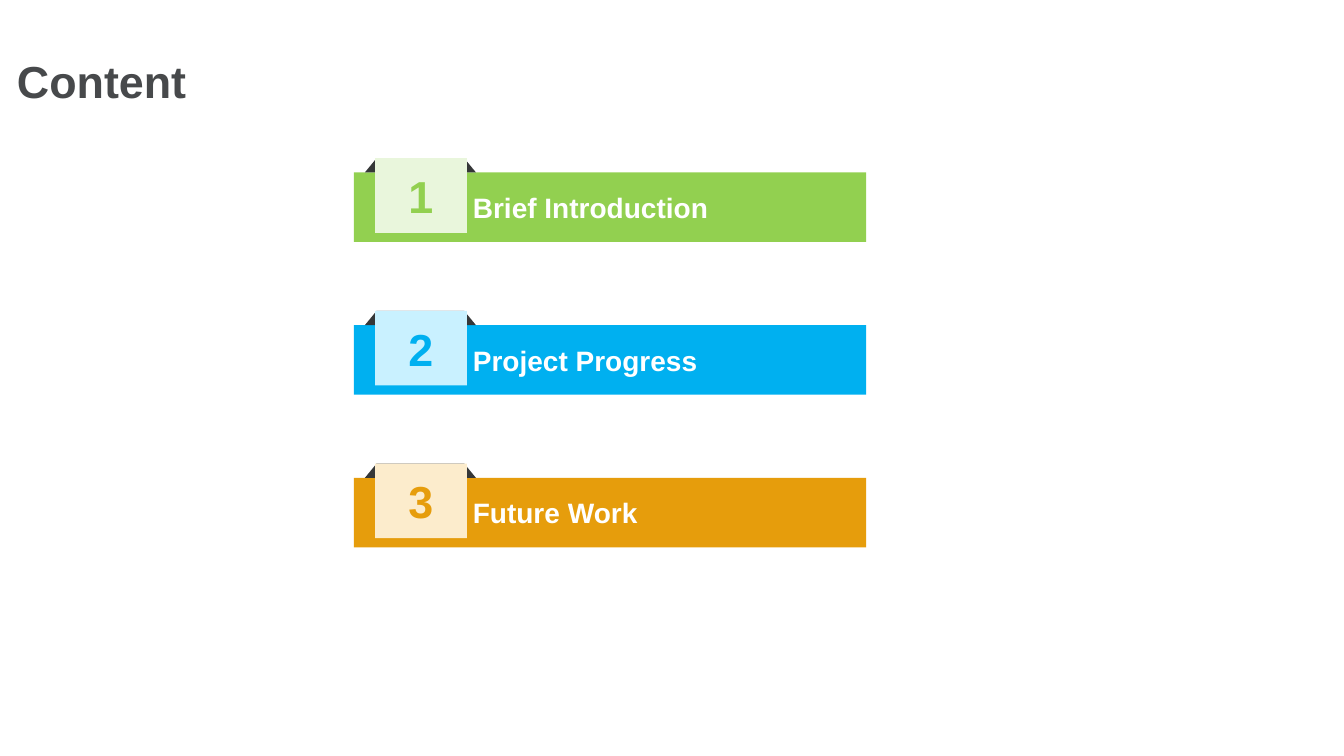
"""Build a content slide with three numbered agenda banners."""
import dataclasses

import pptx
import pptx.dml.color
import pptx.enum.shapes
import pptx.enum.text
import pptx.util

Inches = pptx.util.Inches
Shape = pptx.enum.shapes.MSO_SHAPE
Align = pptx.enum.text.PP_ALIGN
Anchor = pptx.enum.text.MSO_ANCHOR


@dataclasses.dataclass(frozen=True)
class Theme:
    """Hold the colours, font and type sizes of the slide."""
    font: str = "Arial"
    heading_size: int = 32
    label_size: int = 20
    heading: str = "47494B"
    label: str = "FFFFFF"
    fold: str = "353738"
    green: str = "92D050"
    pale_green: str = "E9F6DC"
    blue: str = "00B0F0"
    pale_blue: str = "C9F1FF"
    orange: str = "E69D0C"
    pale_orange: str = "FCECCC"


THEME = Theme()
AGENDA = [
    ("Brief Introduction", THEME.green, THEME.pale_green),
    ("Project Progress", THEME.blue, THEME.pale_blue),
    ("Future Work", THEME.orange, THEME.pale_orange),
]
FIRST_TOP, LAST_TOP = 1.57, 4.6
FOLD_HEIGHT = 0.14


def write_text(box, text, size, colour, align=Align.LEFT):
    """Write one bold paragraph in a shape."""
    box.text_frame.word_wrap = True
    para = box.text_frame.paragraphs[0]
    para.text = text
    para.alignment = align
    para.font.name = THEME.font
    para.font.size = pptx.util.Pt(size)
    para.font.bold = True
    para.font.color.rgb = pptx.dml.color.RGBColor.from_string(colour)


def add_block(group, kind, left, top, width, height, colour):
    """Add a plain filled shape without outline or shadow."""
    block = group.shapes.add_shape(
        kind, Inches(left), Inches(top), Inches(width), Inches(height))
    block.shadow.inherit = False
    block.fill.solid()
    block.fill.fore_color.rgb = pptx.dml.color.RGBColor.from_string(colour)
    block.line.fill.background()
    block.text_frame.vertical_anchor = Anchor.MIDDLE
    return block


def add_banner(page, number, top, label, colour, tint):
    """Add a labelled bar with a number tab folded over its top edge."""
    group = page.shapes.add_group_shape()
    bar = add_block(group, Shape.RECTANGLE, 3.51, top + FOLD_HEIGHT, 5.08, 0.69, colour)
    bar.text_frame.margin_left = Inches(1.18)
    write_text(bar, label, THEME.label_size, THEME.label, Align.JUSTIFY)
    fold = add_block(group, Shape.TRAPEZOID, 3.62, top, 1.1, FOLD_HEIGHT, THEME.fold)
    fold.adjustments[0] = 0.82
    tab = add_block(group, Shape.RECTANGLE, 3.72, top, 0.91, 0.74, tint)
    write_text(tab, str(number), THEME.heading_size, colour, Align.CENTER)


def add_heading(page, text):
    """Add the slide heading."""
    box = page.shapes.add_textbox(
        Inches(0.07), Inches(0.48), Inches(2.11), Inches(0.64))
    write_text(box, text, THEME.heading_size, THEME.heading)


def main():
    """Build and save the deck."""
    deck = pptx.Presentation()
    deck.slide_width, deck.slide_height = Inches(13.33), Inches(7.5)
    page = deck.slides.add_slide(deck.slide_layouts[6])
    pitch = (LAST_TOP - FIRST_TOP) / (len(AGENDA) - 1)
    for index, (label, colour, tint) in enumerate(AGENDA):
        add_banner(page, index + 1, FIRST_TOP + index * pitch, label, colour, tint)
    add_heading(page, "Content")
    deck.save("out.pptx")


if __name__ == "__main__":
    main()
